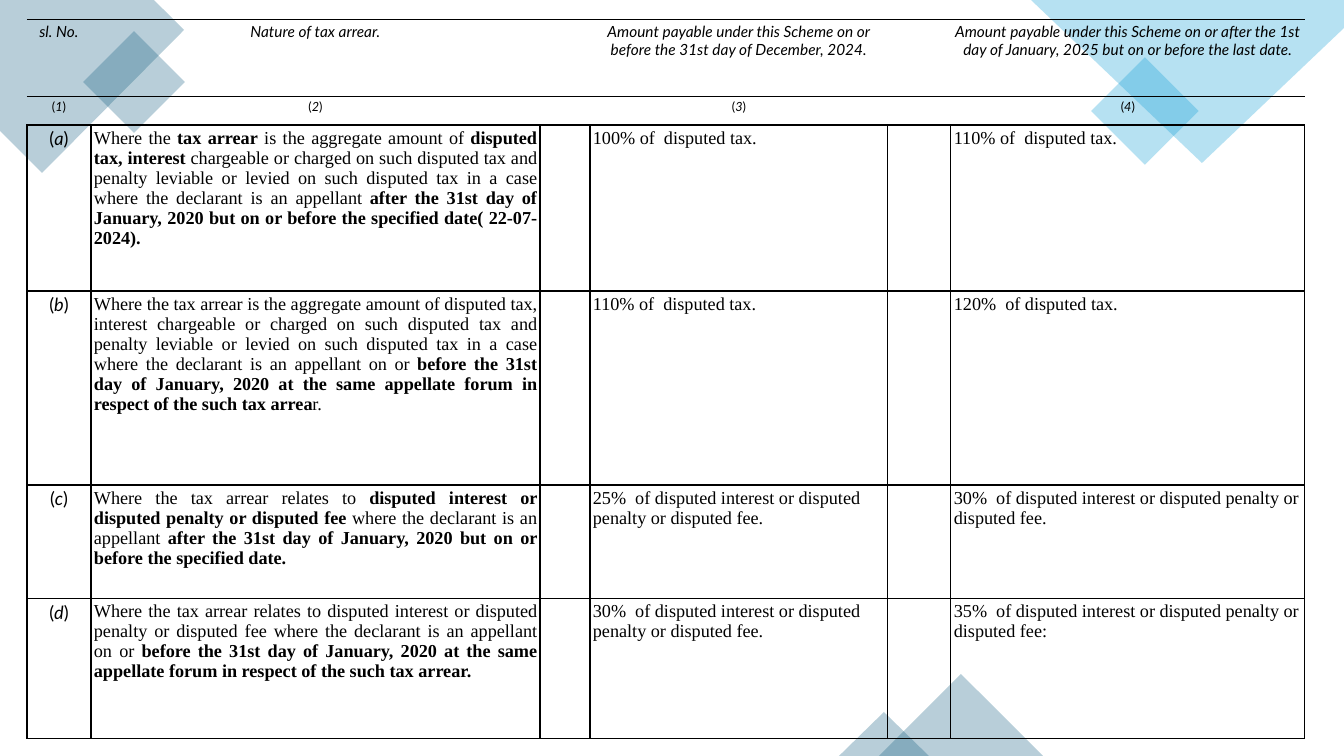
from lxml.etree import SubElement
from pptx import Presentation
from pptx.dml.color import RGBColor
from pptx.enum.shapes import MSO_SHAPE
from pptx.enum.text import PP_ALIGN
from pptx.oxml.ns import qn
from pptx.util import Pt

EMU_PER_PX = 914400 / 100.8
BLACK = RGBColor(0x00, 0x00, 0x00)
TEAL = RGBColor(0x15, 0x60, 0x82)
SKY = RGBColor(0x0F, 0x9E, 0xD5)
HEADING_FONT = "Lato"
BODY_FONT = "Times New Roman"

COLUMN_WIDTHS = [64, 449, 50, 298, 63, 354]
ROW_HEIGHTS = [77, 29, 166, 194, 114, 140]
TEXT_COLUMNS = [0, 1, 3, 5]
HEADINGS = [
    "sl. No.",
    "Nature of tax arrear.",
    "Amount payable under this Scheme on or before the 31st day of December, 2024.",
    "Amount payable under this Scheme on or after the 1st day of January, 2025 "
    "but on or before the last date.",
]
TAX_ARREARS = [
    ("(*a*)",
     "Where the* tax arrear* is the aggregate amount of *disputed tax, interest *"
     "chargeable or charged on such disputed tax and penalty leviable or levied on "
     "such disputed tax in a case where the declarant is an appellant *after the 31st "
     "day of January, 2020 but on or before the specified date( 22-07-2024).",
     "100% of  disputed tax.",
     "110% of  disputed tax."),
    ("(*b*)",
     "Where the tax arrear is the aggregate amount of disputed tax, interest "
     "chargeable or charged on such disputed tax and penalty leviable or levied on "
     "such disputed tax in a case where the declarant is an appellant on or* before "
     "the 31st day of January, 2020 at the same appellate forum in respect of the "
     "such tax arrea*r.",
     "110% of  disputed tax.",
     "120%  of disputed tax."),
    ("(*c*)",
     "Where the tax arrear relates to *disputed interest or disputed penalty or "
     "disputed fee* where the declarant is an appellant *after the 31st day of "
     "January, 2020 but on or before the specified date.",
     "25%  of disputed interest or disputed penalty or disputed fee.",
     "30%  of disputed interest or disputed penalty or disputed fee."),
    ("(*d*)",
     "Where the tax arrear relates to disputed interest or disputed penalty or "
     "disputed fee where the declarant is an appellant on or *before the 31st day of "
     "January, 2020 at the same appellate forum in respect of the such tax arrear.",
     "30%  of disputed interest or disputed penalty or disputed fee.",
     "35%  of disputed interest or disputed penalty or disputed fee:"),
]


def px(length):
    return round(length * EMU_PER_PX)


class SlideBuilder:
    def __init__(self, slide, opacity=30):
        self.slide = slide
        self.opacity = opacity

    def tint(self, shape, color):
        shape.shadow.inherit = False
        shape.line.fill.background()
        shape.fill.solid()
        shape.fill.fore_color.rgb = color
        color_element = shape.fill._xPr.find(qn("a:solidFill"))[0]
        SubElement(color_element, qn("a:alpha"), val=str(self.opacity * 1000))

    def polygon(self, points, color):
        start, *others = [(px(x), px(y)) for x, y in points]
        builder = self.slide.shapes.build_freeform(*start)
        builder.add_line_segments(others, close=True)
        self.tint(builder.convert_to_shape(), color)

    def shape(self, kind, left, top, width, height, color, rotation=0):
        shape = self.slide.shapes.add_shape(
            kind, px(left), px(top), px(width), px(height))
        shape.rotation = rotation
        self.tint(shape, color)

    def table(self, left, top, widths, heights):
        table = self.slide.shapes.add_table(
            len(heights), len(widths), px(left), px(top),
            px(sum(widths)), px(sum(heights))).table
        table.first_row = table.horz_banding = False
        for column, width in zip(table.columns, widths):
            column.width = px(width)
        for row, height in zip(table.rows, heights):
            row.height = px(height)
        return table

    def borders(self, cell, left, right, top, bottom):
        properties = cell._tc.get_or_add_tcPr()
        sides = {"a:lnL": left, "a:lnR": right, "a:lnT": top, "a:lnB": bottom}
        for tag, width in sides.items():
            line = SubElement(properties, qn(tag), w=str(Pt(width)))
            if width:
                fill = SubElement(line, qn("a:solidFill"))
                SubElement(fill, qn("a:srgbClr"), val=str(BLACK))
            else:
                SubElement(line, qn("a:noFill"))

    def cell(self, cell, text, font_name, size, alignment, italic=False, emphasis="bold"):
        cell.margin_left = cell.margin_right = px(3)
        cell.margin_top = cell.margin_bottom = px(3)
        paragraph = cell.text_frame.paragraphs[0]
        paragraph.alignment = alignment
        paragraph.font.name = font_name
        paragraph.font.size = Pt(size)
        paragraph.font.color.rgb = BLACK
        paragraph.font.italic = italic
        for index, part in enumerate(text.split("*")):
            if part:
                run = paragraph.add_run()
                run.text = part
                if index % 2:
                    setattr(run.font, emphasis, True)


def add_decoration(builder):
    builder.polygon([(154, 0), (0, 0), (0, 131), (42, 173), (184, 30)], TEAL)
    builder.shape(MSO_SHAPE.RECTANGLE, 98, 46, 72, 72, TEAL, 315)
    builder.shape(MSO_SHAPE.RECTANGLE, 1107, 73, 76, 76, SKY, 315)
    builder.polygon([(1344, 0), (1031, 0), (1202, 163), (1344, 28)], SKY)
    builder.shape(MSO_SHAPE.ISOSCELES_TRIANGLE, 879, 674, 164, 82, TEAL)
    builder.shape(MSO_SHAPE.ISOSCELES_TRIANGLE, 839, 712, 90, 44, TEAL)


def add_arrears_table(builder):
    table = builder.table(27, 19, COLUMN_WIDTHS, ROW_HEIGHTS)
    numbers = [f"(*{number}*)" for number in range(1, 5)]
    for row_index, texts in enumerate([HEADINGS, numbers, *TAX_ARREARS]):
        text_by_column = dict(zip(TEXT_COLUMNS, texts))
        is_body = row_index > 1
        size = (11, 9)[row_index] if not is_body else 13
        side = 1 if is_body else 0
        top = 1 if is_body else 0.75
        bottom = 0.75 if row_index == 0 else 1
        for column_index in range(len(COLUMN_WIDTHS)):
            cell = table.cell(row_index, column_index)
            is_label = not is_body or column_index == 0
            if is_label:
                alignment = PP_ALIGN.CENTER
            else:
                alignment = PP_ALIGN.JUSTIFY if column_index == 1 else PP_ALIGN.LEFT
            builder.cell(
                cell, text_by_column.get(column_index, ""),
                HEADING_FONT if is_label else BODY_FONT, size, alignment,
                italic=row_index == 0, emphasis="italic" if is_label else "bold")
            builder.borders(cell, side, side, top, bottom)
            cell.fill.background()


def main():
    presentation = Presentation()
    presentation.slide_width = px(1344)
    presentation.slide_height = px(756)
    builder = SlideBuilder(presentation.slides.add_slide(presentation.slide_layouts[6]))
    add_decoration(builder)
    add_arrears_table(builder)
    presentation.save("out.pptx")


if __name__ == "__main__":
    main()
